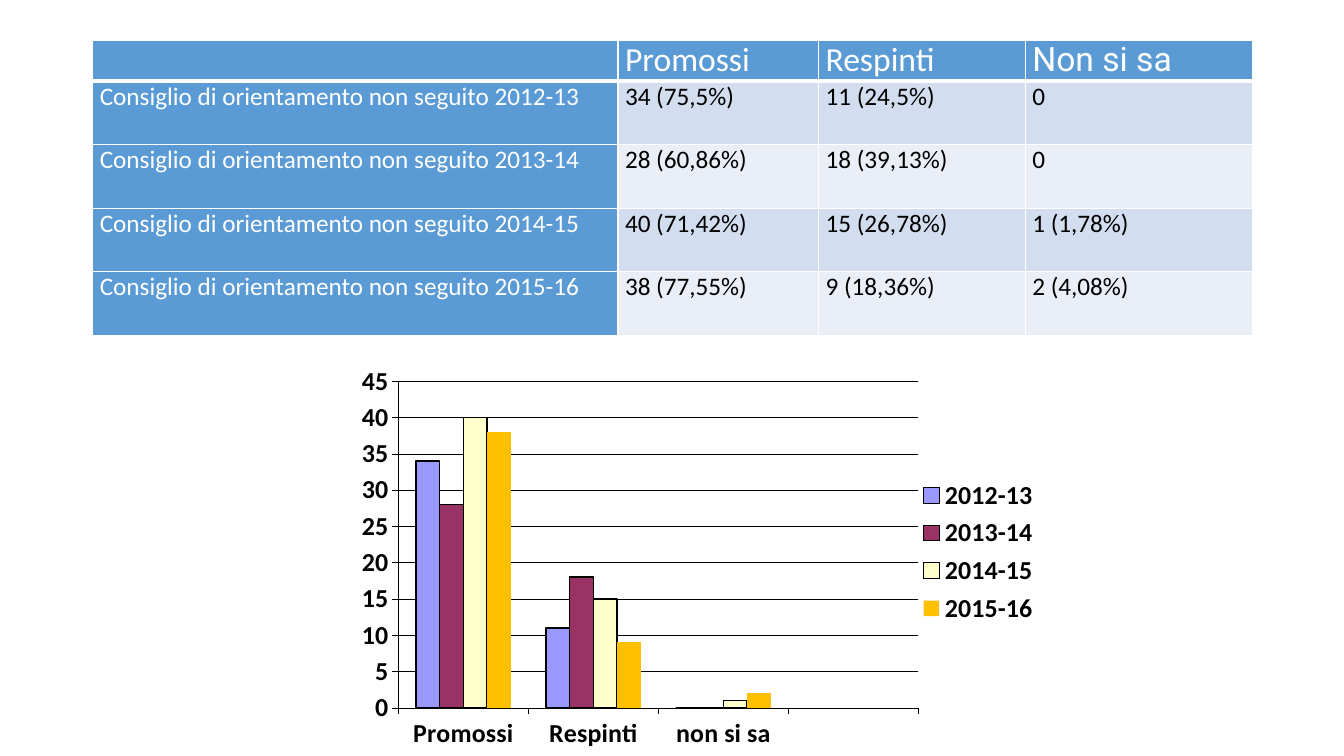
from lxml.etree import SubElement
from pptx import Presentation
from pptx.chart.data import CategoryChartData
from pptx.dml.color import RGBColor
from pptx.enum.chart import XL_CHART_TYPE as ChartType
from pptx.enum.chart import XL_LEGEND_POSITION as LegendPosition
from pptx.enum.chart import XL_TICK_LABEL_POSITION as LabelPosition
from pptx.enum.chart import XL_TICK_MARK as TickMark
from pptx.enum.text import PP_ALIGN as Align
from pptx.oxml import parse_xml
from pptx.oxml.ns import nsdecls, qn
from pptx.util import Inches, Pt

WIDTH, HEIGHT = Inches(13.33), Inches(7.5)
WHITE = RGBColor(0xFF, 0xFF, 0xFF)
BLACK = RGBColor(0x00, 0x00, 0x00)
BLUE = RGBColor(0x5B, 0x9B, 0xD5)
BANDS = (RGBColor(0xD2, 0xDE, 0xEF), RGBColor(0xEA, 0xEF, 0xF7))

COLUMN_WIDTHS = (5.21, 1.99, 2.05, 2.25)
HEADER_HEIGHT, ROW_HEIGHT = 0.4, 0.63
HEADINGS = ("", "Promossi", "Respinti", "Non si sa")
RESULTS = {
    "2012-13": ("34 (75,5%)", "11 (24,5%)", "0"),
    "2013-14": ("28 (60,86%)", "18 (39,13%)", "0"),
    "2014-15": ("40 (71,42%)", "15 (26,78%)", "1 (1,78%)"),
    "2015-16": ("38 (77,55%)", "9 (18,36%)", "2 (4,08%)"),
}
CATEGORIES = ("Promossi", "Respinti", "non si sa", "")
SERIES = (
    ("2012-13", (34, 11, 0, None), RGBColor(0x99, 0x99, 0xFF), True),
    ("2013-14", (28, 18, 0, None), RGBColor(0x99, 0x33, 0x66), True),
    ("2014-15", (40, 15, 1, None), RGBColor(0xFF, 0xFF, 0xCC), True),
    ("2015-16", (38, 9, 2, None), RGBColor(0xFF, 0xC0, 0x00), False),
)
PLOT_SHARES = {"x": 0.096, "y": 0.082, "w": 0.722, "h": 0.8}


def place(left, top, width, height):
    """Turn shares of the slide into lengths."""
    return (int(WIDTH * left), int(HEIGHT * top),
            int(WIDTH * width), int(HEIGHT * height))


def write_text(cell, text, *, size=18, color=BLACK, font="Calibri"):
    """Write one justified run into a table cell."""
    para = cell.text_frame.paragraphs[0]
    para.alignment = Align.JUSTIFY
    span = para.add_run()
    span.text = text
    span.font.size = Pt(size)
    span.font.name = font
    span.font.bold = False
    span.font.color.rgb = color


def style_cell(cell, fill, bottom=1):
    """Set the margins, fill and white borders of a cell."""
    cell.margin_left = cell.margin_right = Inches(0.07)
    cell.margin_top = cell.margin_bottom = 0
    cell.fill.solid()
    cell.fill.fore_color.rgb = fill
    properties = cell._tc.get_or_add_tcPr()
    for index, (side, width) in enumerate(zip("LRTB", (1, 1, 1, bottom))):
        border = parse_xml(
            f'<a:ln{side} {nsdecls("a")} w="{Pt(width)}"><a:solidFill>'
            f'<a:srgbClr val="{WHITE}"/></a:solidFill></a:ln{side}>')
        properties.insert(index, border)


def add_results_table(page):
    """Add the table of results by school year."""
    table = page.shapes.add_table(
        len(RESULTS) + 1, len(HEADINGS), *place(0.069, 0.053, 0.863, 0.387)).table
    for column, width in zip(table.columns, COLUMN_WIDTHS):
        column.width = Inches(width)
    for index, row in enumerate(table.rows):
        row.height = Inches(ROW_HEIGHT if index else HEADER_HEIGHT)
    for index, heading in enumerate(HEADINGS):
        cell = table.cell(0, index)
        style_cell(cell, BLUE, bottom=3)
        font = "Roboto" if heading == "Non si sa" else "Calibri"
        write_text(cell, heading, size=24, color=WHITE, font=font)
    for number, (year, results) in enumerate(RESULTS.items()):
        label = table.cell(number + 1, 0)
        style_cell(label, BLUE)
        write_text(label, f"Consiglio di orientamento non seguito {year}", color=WHITE)
        for index, result in enumerate(results, start=1):
            cell = table.cell(number + 1, index)
            style_cell(cell, BANDS[number % 2])
            write_text(cell, result)


def style_line(line, width):
    """Make a line black and of the given width."""
    line.color.rgb = BLACK
    line.width = Pt(width)


def style_font(font):
    """Apply the bold black lettering of the chart."""
    font.name = "Calibri"
    font.size = Pt(18.5)
    font.bold = True
    font.color.rgb = BLACK


def style_axis(axis):
    """Give an axis outer ticks, a thin line and chart lettering."""
    axis.major_tick_mark = TickMark.OUTSIDE
    axis.minor_tick_mark = TickMark.NONE
    style_line(axis.format.line, 0.25)
    style_font(axis.tick_labels.font)


def fix_plot_area(chart):
    """Fix the inner plot area as shares of the chart."""
    area = chart._chartSpace.chart.plotArea
    for old in area.findall(qn("c:layout")):
        area.remove(old)
    layout = parse_xml(f'<c:layout {nsdecls("c")}><c:manualLayout/></c:layout>')
    manual = layout[0]
    settings = {"layoutTarget": "inner", "xMode": "edge", "yMode": "edge", **PLOT_SHARES}
    for name, value in settings.items():
        SubElement(manual, qn(f"c:{name}")).set("val", str(value))
    area.insert(0, layout)


def add_results_chart(page):
    """Add the clustered columns of results by school year."""
    data = CategoryChartData()
    data.categories = CATEGORIES
    for name, values, _, _ in SERIES:
        data.add_series(name, values)
    chart = page.shapes.add_chart(
        ChartType.COLUMN_CLUSTERED, *place(0.245, 0.46, 0.536, 0.54), data).chart
    style_font(chart.font)
    chart.has_title = False
    chart.has_legend = True
    chart.legend.position = LegendPosition.RIGHT
    chart.legend.include_in_layout = False
    style_font(chart.legend.font)
    plot = chart.plots[0]
    plot.gap_width = 150
    plot.overlap = 0
    plot.vary_by_categories = False
    for series, (_, _, color, outlined) in zip(plot.series, SERIES):
        series.format.fill.solid()
        series.format.fill.fore_color.rgb = color
        if outlined:
            style_line(series.format.line, 1)
        else:
            series.format.line.fill.background()
    style_axis(chart.category_axis)
    chart.category_axis.tick_label_position = LabelPosition.LOW
    scale = chart.value_axis
    style_axis(scale)
    scale.minimum_scale, scale.maximum_scale, scale.major_unit = 0, 45, 5
    scale.has_major_gridlines = True
    style_line(scale.major_gridlines.format.line, 0.25)
    fix_plot_area(chart)


def main():
    """Build the slide and save it."""
    deck = Presentation()
    deck.slide_width, deck.slide_height = WIDTH, HEIGHT
    page = deck.slides.add_slide(deck.slide_layouts[6])
    add_results_table(page)
    add_results_chart(page)
    deck.save("out.pptx")


if __name__ == "__main__":
    main()
